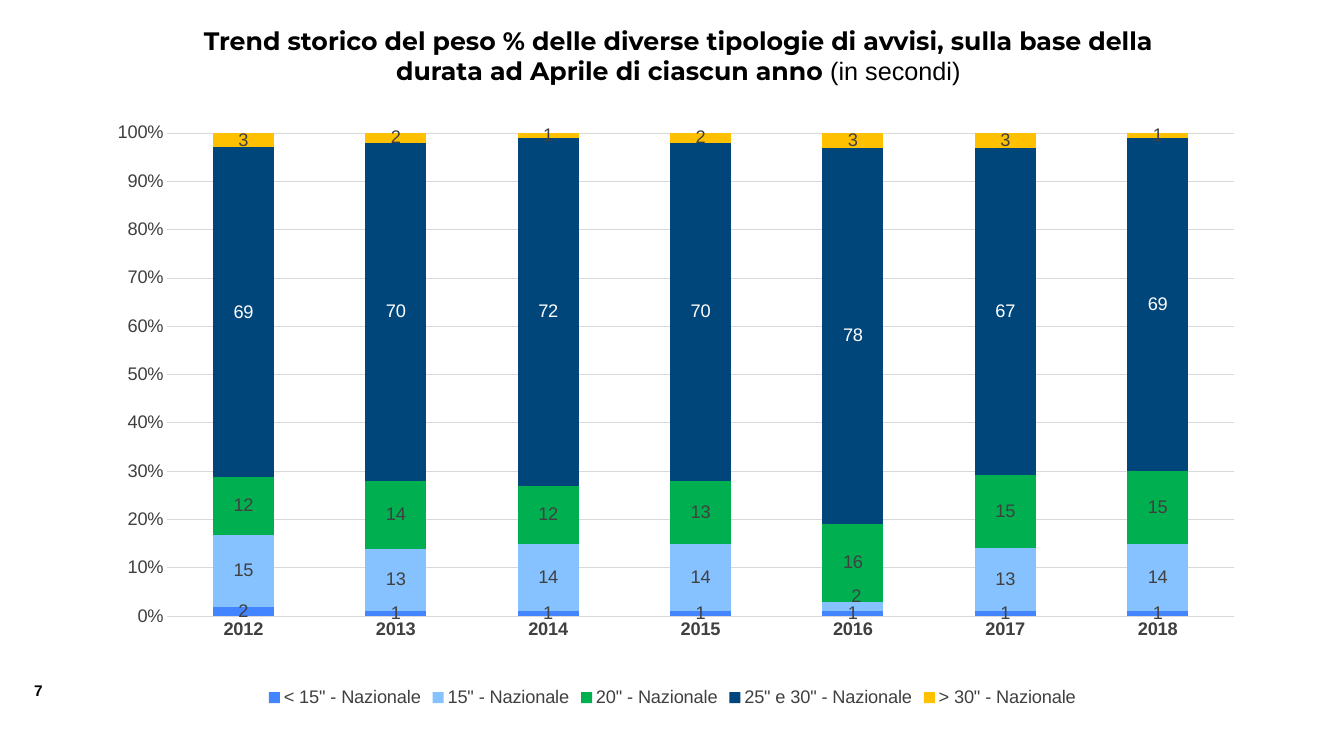
from dataclasses import dataclass

from pptx import Presentation
from pptx.chart.chart import Chart
from pptx.chart.data import CategoryChartData
from pptx.dml.color import RGBColor
from pptx.enum.chart import (XL_CHART_TYPE, XL_LABEL_POSITION, XL_LEGEND_POSITION,
                             XL_TICK_MARK)
from pptx.enum.text import MSO_ANCHOR, MSO_AUTO_SIZE, PP_ALIGN
from pptx.oxml import parse_xml
from pptx.oxml.ns import nsdecls, qn
from pptx.util import Pt

COLOURS = {
    "white": "FFFFFF", "black": "000000", "text": "404040", "grid": "D9D9D9",
    "under_15": "4285FF", "exactly_15": "85C2FF", "exactly_20": "00B050",
    "25_and_30": "00467A", "over_30": "FFC000",
}
YEARS = ["2012", "2013", "2014", "2015", "2016", "2017", "2018"]


@dataclass
class Duration:
    name: str
    colour: str
    percents: list[int]
    label_colour: str = "text"


DURATIONS = [
    Duration('< 15" - Nazionale', "under_15", [2, 1, 1, 1, 1, 1, 1]),
    Duration('15" - Nazionale', "exactly_15", [15, 13, 14, 14, 2, 13, 14]),
    Duration('20" - Nazionale', "exactly_20", [12, 14, 12, 13, 16, 15, 15]),
    Duration('25" e 30" - Nazionale', "25_and_30", [69, 70, 72, 70, 78, 67, 69], "white"),
    Duration('> 30" - Nazionale', "over_30", [3, 2, 1, 2, 3, 3, 1]),
]


def rgb(colour: str) -> RGBColor:
    return RGBColor.from_string(COLOURS[colour])


def style(font, size: float, colour: str = "text", bold: bool = False,
          name: str = "Arial") -> None:
    font.size, font.bold, font.name = Pt(size), bold, name
    font.color.rgb = rgb(colour)


def manual_layout(inner: bool, **places: float):
    target = '<c:layoutTarget val="inner"/>' if inner else ""
    modes = '<c:xMode val="edge"/><c:yMode val="edge"/>' if inner else ""
    values = "".join(f'<c:{key} val="{value}"/>' for key, value in places.items())
    return parse_xml(f'<c:layout {nsdecls("c")}><c:manualLayout>{target}{modes}{values}'
                     '</c:manualLayout></c:layout>')


def format_axes(chart: Chart) -> None:
    years, percent = chart.category_axis, chart.value_axis
    for axis in (years, percent):
        axis.major_tick_mark = axis.minor_tick_mark = XL_TICK_MARK.NONE
    style(years.tick_labels.font, 13, bold=True)
    style(percent.tick_labels.font, 13)
    percent.tick_labels.number_format = "0%"
    percent.tick_labels.number_format_is_linked = False
    percent.minimum_scale, percent.maximum_scale, percent.major_unit = 0, 1, 0.1
    percent.format.line.fill.background()
    percent.has_major_gridlines = True
    for line in (years.format.line, percent.major_gridlines.format.line):
        line.color.rgb, line.width = rgb("grid"), Pt(0.75)


def format_series(series, duration: Duration) -> None:
    series.format.fill.solid()
    series.format.fill.fore_color.rgb = rgb(duration.colour)
    series.invert_if_negative = False
    series.data_labels.show_value = True
    series.data_labels.position = XL_LABEL_POSITION.CENTER
    style(series.data_labels.font, 13, duration.label_colour)
    # Labels show the share without its percent sign
    for index, percent in enumerate(duration.percents):
        label = series.points[index].data_label
        label.text_frame.text = str(percent)
        style(label.text_frame.paragraphs[0].runs[0].font, 13, duration.label_colour)
        label.position = XL_LABEL_POSITION.CENTER


def add_trend_chart(slide) -> None:
    data = CategoryChartData(number_format="0%")
    data.categories = YEARS
    for duration in DURATIONS:
        data.add_series(duration.name, [percent / 100 for percent in duration.percents])
    chart = slide.shapes.add_chart(XL_CHART_TYPE.COLUMN_STACKED_100, Pt(68.4), Pt(82.8),
                                   Pt(823.68), Pt(425.52), data).chart
    chart.has_title = False
    style(chart.font, 13)
    plot = chart.plots[0]
    plot.gap_width, plot.overlap, plot.vary_by_categories = 150, 100, False
    format_axes(chart)
    for series, duration in zip(plot.series, DURATIONS):
        format_series(series, duration)

    # Lift the label of the thin 15" band in 2016 clear of the one below
    thin_band = plot.series[1]._element.find(qn("c:dLbls")).findall(qn("c:dLbl"))[4]
    thin_band.find(qn("c:idx")).addnext(manual_layout(False, x=0.003, y=-0.016))

    # Legend and plot area
    chart.has_legend = True
    chart.legend.position = XL_LEGEND_POSITION.BOTTOM
    chart.legend.include_in_layout = False
    style(chart.legend.font, 13)
    plot_area = chart._chartSpace.find(qn("c:chart")).find(qn("c:plotArea"))
    for layout in plot_area.findall(qn("c:layout")):
        plot_area.remove(layout)
    plot_area.insert(0, manual_layout(True, x=0.062, y=0.029, w=0.925, h=0.811))


def add_title(slide) -> None:
    title = slide.shapes.title
    title.left, title.top, title.width, title.height = (
        Pt(111.6), Pt(14.4), Pt(745.92), Pt(51.12))
    title.fill.solid()
    title.fill.fore_color.rgb = rgb("white")
    frame = title.text_frame
    frame.auto_size, frame.word_wrap = MSO_AUTO_SIZE.NONE, True
    frame.vertical_anchor = MSO_ANCHOR.TOP
    heading = frame.paragraphs[0]
    heading.alignment = PP_ALIGN.CENTER
    subject, unit = heading.add_run(), heading.add_run()
    subject.text = ("Trend storico del peso % delle diverse tipologie di avvisi, "
                    "sulla base della durata ad Aprile di ciascun anno ")
    unit.text = "(in secondi)"
    style(subject.font, 18, "black", True, "Montserrat")
    style(unit.font, 18, "black")


def add_page_number(slide) -> None:
    frame = slide.shapes.add_textbox(Pt(17.28), Pt(483.12), Pt(30.24), Pt(20.88)).text_frame
    frame.word_wrap = False
    frame.text = "7"
    style(frame.paragraphs[0].runs[0].font, 11, "black", True)


def main() -> None:
    presentation = Presentation()
    presentation.slide_width, presentation.slide_height = Pt(960), Pt(540)
    slide = presentation.slides.add_slide(presentation.slide_layouts[5])
    add_page_number(slide)
    add_title(slide)
    add_trend_chart(slide)
    presentation.save("out.pptx")


if __name__ == "__main__":
    main()
